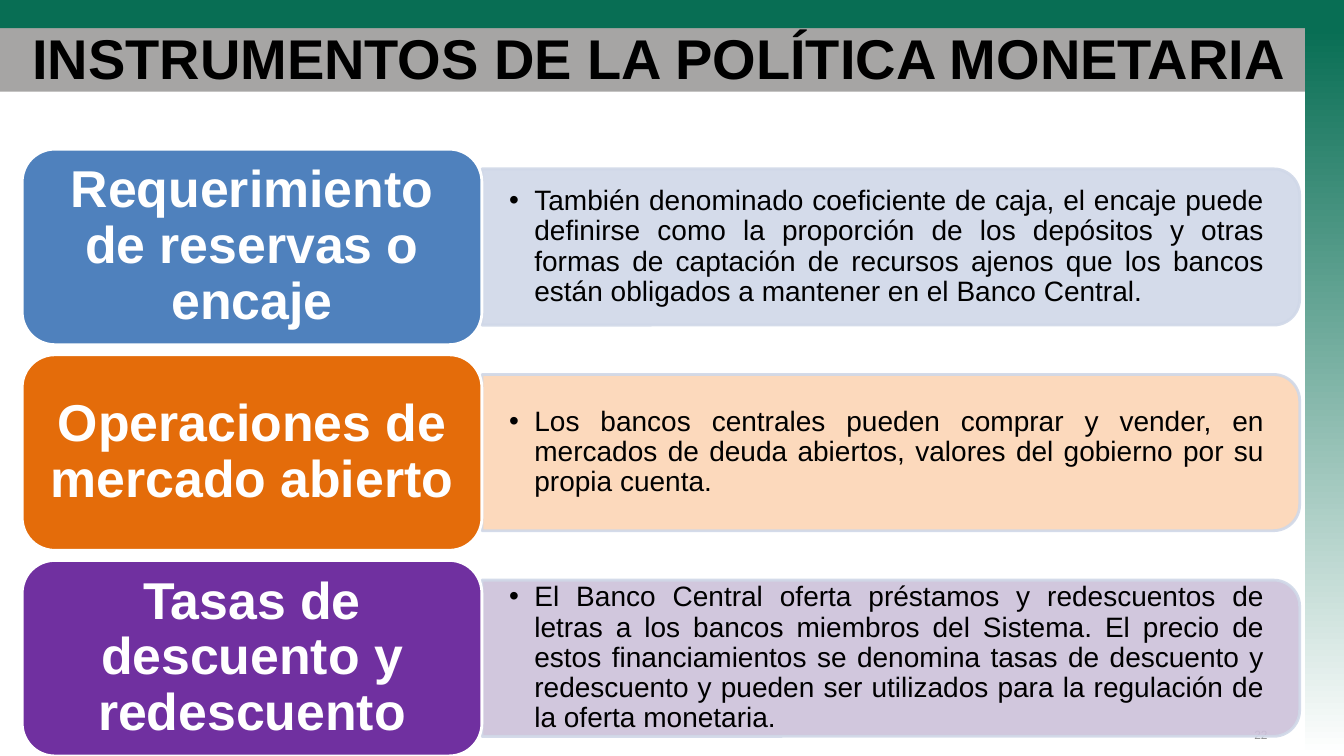
import pptx
import pptx.util
import pptx.dml.color
import pptx.enum.shapes
import pptx.enum.text
import lxml.etree
from pptx.oxml.ns import qn

Inches = pptx.util.Inches
Pt = pptx.util.Pt
RGBColor = pptx.dml.color.RGBColor
Shape = pptx.enum.shapes.MSO_SHAPE
Align = pptx.enum.text.PP_ALIGN
Anchor = pptx.enum.text.MSO_ANCHOR

BLACK = RGBColor(0x00, 0x00, 0x00)
WHITE = RGBColor(0xFF, 0xFF, 0xFF)
GREEN = RGBColor(0x08, 0x6E, 0x54)
GRAY = RGBColor(0xA6, 0xA5, 0xA4)
NUMBER_GRAY = RGBColor(0x8C, 0x8C, 0x8C)
BLUE = RGBColor(0x4F, 0x81, 0xBD)
ORANGE = RGBColor(0xE4, 0x6C, 0x0A)
PURPLE = RGBColor(0x70, 0x30, 0xA0)
PALE_BLUE = RGBColor(0xD0, 0xD8, 0xE8)
PALE_ORANGE = RGBColor(0xFC, 0xD5, 0xB5)
PALE_PURPLE = RGBColor(0xCC, 0xC1, 0xDA)

WIDTH, HEIGHT = 13.33, 7.5
TOP_BAR = 0.28
SIDE_LEFT = 12.94
LEFT, FIRST_ROW, ROW_STEP = 0.22, 1.48, 2.04
CARD_WIDTH, CARD_HEIGHT = 4.56, 1.94
PANEL_LEFT = LEFT + CARD_WIDTH
PANEL_WIDTH, PANEL_HEIGHT = 8.11, 1.55
TEXT_WIDTH, TEXT_HEIGHT = 8.03, 1.4


def add_block(kind, left, top, width, height, color):
    block = page.shapes.add_shape(kind, Inches(left), Inches(top), Inches(width), Inches(height))
    block.shadow.inherit = False
    block.fill.solid()
    block.fill.fore_color.rgb = color
    block.line.fill.background()
    return block


def set_text(box, text, size, color, align, margins, bold=False):
    frame = box.text_frame
    frame.word_wrap = True
    frame.auto_size = pptx.enum.text.MSO_AUTO_SIZE.NONE
    frame.vertical_anchor = Anchor.MIDDLE
    frame.margin_left = frame.margin_right = Inches(margins[0])
    frame.margin_top = frame.margin_bottom = Inches(margins[1])
    para = frame.paragraphs[0]
    para.text = text
    para.alignment = align
    para.font.name = "Arial"
    para.font.size = Pt(size)
    para.font.bold = bold
    para.font.color.rgb = color
    return para


deck = pptx.Presentation()
deck.slide_width = Inches(WIDTH)
deck.slide_height = Inches(HEIGHT)
page = deck.slides.add_slide(deck.slide_layouts[5])

add_block(Shape.RECTANGLE, 0, TOP_BAR, WIDTH, 0.63, GRAY)
add_block(Shape.RECTANGLE, 0, 0, WIDTH, TOP_BAR, GREEN)
side_bar = add_block(Shape.RECTANGLE, SIDE_LEFT, TOP_BAR, WIDTH - SIDE_LEFT, HEIGHT - TOP_BAR, GREEN)
side_bar.fill.gradient()
side_bar.fill.gradient_angle = 270
for stop, color, position in zip(side_bar.fill.gradient_stops, (GREEN, WHITE), (0, 1)):
    stop.color.rgb = color
    stop.position = position

number = page.shapes.add_textbox(Inches(11.89), Inches(7.09), Inches(0.78), Inches(0.4))
set_text(number, "22", 8.5, NUMBER_GRAY, Align.RIGHT, (0.1, 0.05))

title = page.shapes.title
title.left, title.top = Inches(LEFT), Inches(0.3)
title.width, title.height = Inches(12.67), Inches(0.53)
set_text(title, "INSTRUMENTOS DE LA POLÍTICA MONETARIA", 40, BLACK, Align.LEFT, (0.1, 0), True)
page.shapes._spTree.append(title._element)

instruments = [
    ("Requerimiento de reservas o encaje", BLUE, PALE_BLUE,
     "También denominado coeficiente de caja, el encaje puede definirse como la proporción "
     "de los depósitos y otras formas de captación de recursos ajenos que los bancos están "
     "obligados a mantener en el Banco Central."),
    ("Operaciones de mercado abierto", ORANGE, PALE_ORANGE,
     "Los bancos centrales pueden comprar y vender, en mercados de deuda abiertos, valores "
     "del gobierno por su propia cuenta."),
    ("Tasas de descuento y redescuento", PURPLE, PALE_PURPLE,
     "El Banco Central oferta préstamos y redescuentos de letras a los bancos miembros del "
     "Sistema. El precio de estos financiamientos se denomina tasas de descuento y "
     "redescuento y pueden ser utilizados para la regulación de la oferta monetaria."),
]

for row, (name, color, pale, description) in enumerate(instruments):
    top = FIRST_ROW + row * ROW_STEP
    middle = top + CARD_HEIGHT / 2

    panel = add_block(Shape.ROUND_2_SAME_RECTANGLE,
                      PANEL_LEFT + (PANEL_WIDTH - PANEL_HEIGHT) / 2, middle - PANEL_WIDTH / 2,
                      PANEL_HEIGHT, PANEL_WIDTH, pale)
    panel.rotation = 90
    panel.line.color.rgb = PALE_BLUE
    panel.line.width = Pt(2)
    for tint in panel._element.spPr.iter(qn("a:srgbClr")):
        lxml.etree.SubElement(tint, qn("a:alpha"), val="90000")

    box = page.shapes.add_textbox(Inches(PANEL_LEFT), Inches(middle - TEXT_HEIGHT / 2),
                                  Inches(TEXT_WIDTH), Inches(TEXT_HEIGHT))
    properties = box.text_frame.paragraphs[0]._p.get_or_add_pPr()
    properties.set("marL", str(Inches(0.25)))
    properties.set("indent", str(-Inches(0.25)))
    lxml.etree.SubElement(properties, qn("a:buFont"), typeface="Arial")
    lxml.etree.SubElement(properties, qn("a:buChar"), char="•")
    para = set_text(box, description, 20, BLACK, Align.JUSTIFY, (0.27, 0.14))
    para.line_spacing = 0.9

    card = add_block(Shape.ROUNDED_RECTANGLE, LEFT, top, CARD_WIDTH, CARD_HEIGHT, color)
    card.line.color.rgb = WHITE
    card.line.width = Pt(2)
    para = set_text(card, name, 37, WHITE, Align.CENTER, (0.15, 0.08), True)
    para.line_spacing = 0.9

deck.save("out.pptx")
